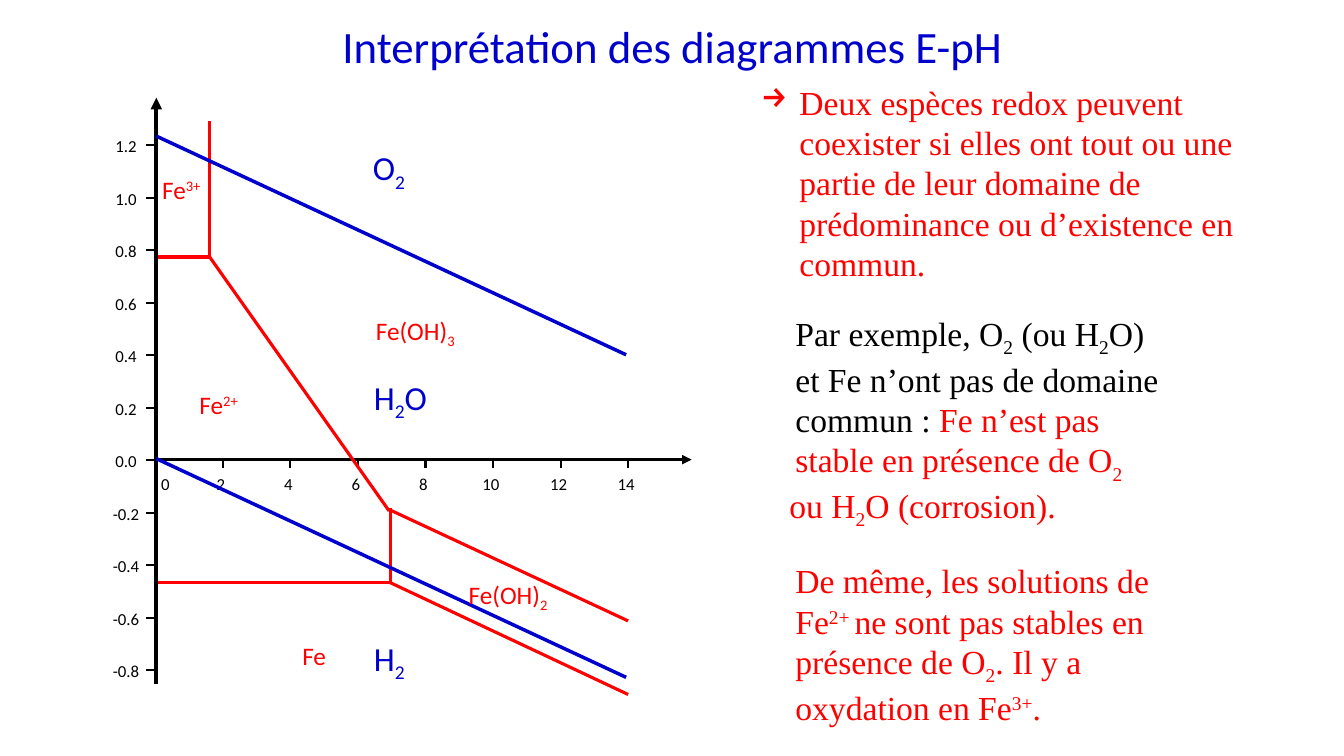
from pptx import Presentation
from pptx.dml.color import RGBColor
from pptx.enum.shapes import MSO_CONNECTOR as Conn
from pptx.enum.text import MSO_ANCHOR as Anchor, PP_ALIGN as Align
from pptx.oxml.ns import qn
from pptx.util import Inches, Pt
from lxml.etree import SubElement

BLACK, RED, BLUE = "000000", "FF0000", "0000CC"
SUB, SUP = -25000, 30000

deck = Presentation()
deck.slide_width, deck.slide_height = Inches(13.33), Inches(7.5)
slide = deck.slides.add_slide(deck.slide_layouts[5])


def line(x1, y1, x2, y2, color, width, arrow=False):
    wire = slide.shapes.add_connector(
        Conn.STRAIGHT, Inches(x1), Inches(y1), Inches(x2), Inches(y2))
    wire.line.color.rgb = RGBColor.from_string(color)
    wire.line.width = Pt(width)
    props = wire._element.spPr
    if arrow:
        SubElement(props.find(qn("a:ln")), qn("a:tailEnd"), type="triangle")
    SubElement(props, qn("a:effectLst"))


def write(para, runs, size, color, face="Calibri"):
    for text, shift in runs:
        run = para.add_run()
        run.text = text
        run.font.size, run.font.name = Pt(size), face
        run.font.color.rgb = RGBColor.from_string(color)
        if shift:
            run._r.get_or_add_rPr().set("baseline", str(shift))


# Title
title = slide.shapes.title
title.left, title.top = Inches(1.67), Inches(0.13)
title.width, title.height = Inches(10), Inches(0.64)
title.text_frame.vertical_anchor = Anchor.MIDDLE
head = title.text_frame.paragraphs[0]
head.alignment = Align.CENTER
write(head, [("Interprétation des diagrammes E-pH", 0)], 32, BLUE)

# Ticks of both axes, with the place of each label
marks = []
for i in range(11):
    y = 1.44 + 0.521 * i
    line(1.45, y, 1.54, y, BLACK, 1.5)
    marks.append((f"{1.2 - 0.2 * i + 1e-9:.1f}", 1.25, y + 0.01))
marks.append(("0", 1.64, 4.8))
for i in range(1, 8):
    x = 1.54 + 0.67 * i
    line(x, 4.56, x, 4.64, BLACK, 1.5)
    marks.append((str(2 * i), x - 0.02, 4.8))

# pH axis, iron borders, potential axis
line(1.54, 4.56, 6.86, 4.56, BLACK, 2.25, True)
for ends in [
    (1.53, 2.55, 2.08, 2.55),
    (2.08, 2.55, 3.86, 5.07),
    (3.87, 5.06, 6.23, 6.16),
    (1.54, 5.78, 3.87, 5.78),
    (3.87, 5.78, 6.23, 6.89),
    (2.08, 2.55, 2.08, 1.2),
    (3.87, 5.04, 3.87, 5.79),
]:
    line(*ends, RED, 2.25)
line(1.55, 6.79, 1.55, 0.97, BLACK, 2.75, True)

# Axis labels
for text, x, y in marks:
    box = slide.shapes.add_textbox(
        Inches(x - 0.3), Inches(y - 0.15), Inches(0.6), Inches(0.3))
    frame = box.text_frame
    frame.margin_left = frame.margin_right = 0
    frame.vertical_anchor = Anchor.MIDDLE
    frame.word_wrap = True
    frame.paragraphs[0].alignment = Align.CENTER
    write(frame.paragraphs[0], [(text, 0)], 12, BLACK)

# Water borders
for y in (1.35, 4.55):
    line(1.55, y, 6.21, y + 2.17, BLUE, 2.5)

# Species in the diagram
for x, y, wide, size, color, runs in [
    (2.9, 6.3, 0.97, 18, RED, [("Fe", 0)]),
    (3.63, 3.08, 1.47, 18, RED, [("Fe(OH)", 0), ("3", SUB)]),
    (1.88, 3.81, 0.97, 18, RED, [("Fe", 0), ("2+", SUP)]),
    (4.55, 5.7, 1.32, 18, RED, [("Fe(OH)", 0), ("2", SUB)]),
    (1.51, 1.68, 0.97, 18, RED, [("Fe", 0), ("3+", SUP)]),
    (3.6, 1.41, 0.71, 24, BLUE, [("O", 0), ("2", SUB)]),
    (3.61, 6.28, 0.71, 24, BLUE, [("H", 0), ("2", SUB)]),
    (3.61, 3.69, 3.37, 24, BLUE, [("H", 0), ("2", SUB), ("O", 0)]),
]:
    box = slide.shapes.add_textbox(
        Inches(x), Inches(y), Inches(wide), Inches(size / 60 + 0.1))
    box.text_frame.word_wrap = True
    write(box.text_frame.paragraphs[0], runs, size, color)

# Comments: indent, space before, then coloured pieces
notes = [
    (0.38, 0, [(RED, [("Deux espèces redox peuvent coexister si elles ont tout "
                       "ou une partie de leur domaine de prédominance ou "
                       "d’existence en commun.", 0)])]),
    (0.34, 21, [(BLACK, [("Par exemple, O", 0), ("2", SUB), (" (ou H", 0),
                         ("2", SUB), ("O)", 0)])]),
    (0.34, 0, [(BLACK, [("et Fe n’ont pas de domaine", 0)])]),
    (0.34, 0, [(BLACK, [("commun : ", 0)]), (RED, [("Fe n’est pas", 0)])]),
    (0.34, 0, [(RED, [("stable en présence de O", 0), ("2", SUB)])]),
    (0.28, 0, [(RED, [("ou H", 0), ("2", SUB), ("O (corrosion).", 0)])]),
    (0.34, 21, [(RED, [("De même, les solutions de", 0)])]),
    (0.34, 0, [(RED, [("Fe", 0), ("2+ ", SUP), ("ne sont pas stables en", 0)])]),
    (0.34, 0, [(RED, [("présence de O", 0), ("2", SUB), (". Il y a", 0)])]),
    (0.34, 0, [(RED, [("oxydation en Fe", 0), ("3+", SUP), (".", 0)])]),
]
box = slide.shapes.add_textbox(
    Inches(7.45), Inches(0.76), Inches(5.61), Inches(6.36))
frame = box.text_frame
frame.word_wrap = True
for i, (indent, gap, parts) in enumerate(notes):
    para = frame.add_paragraph() if i else frame.paragraphs[0]
    para.space_before = Pt(gap)
    props = para._p.get_or_add_pPr()
    props.set("marL", str(Inches(indent)))
    props.set("indent", str(0 if i else -Inches(indent)))
    if i == 0:
        SubElement(props, qn("a:buChar"), char="→")
    for color, runs in parts:
        write(para, runs, 24, color, "Times New Roman")

deck.save("out.pptx")
